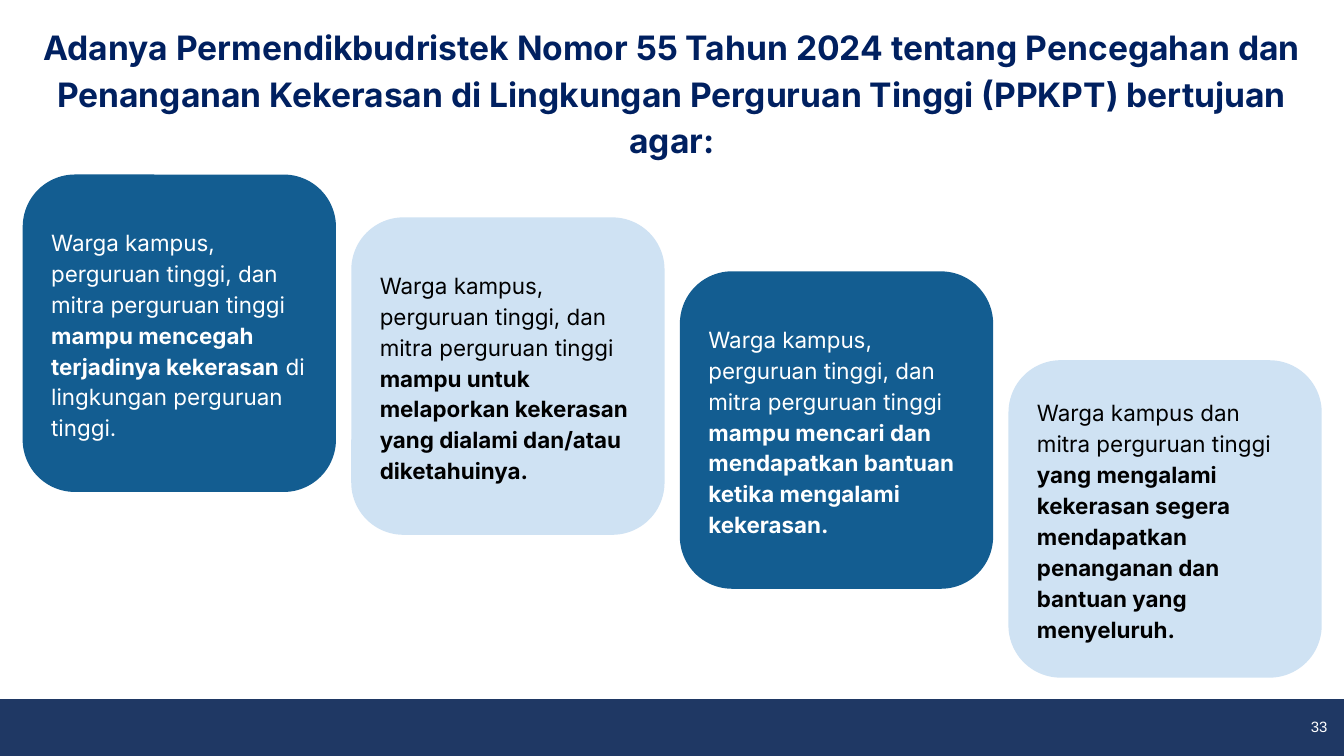
from dataclasses import dataclass

from pptx import Presentation
from pptx.dml.color import RGBColor as RGB
from pptx.enum.shapes import MSO_SHAPE as SHAPE
from pptx.enum.text import MSO_ANCHOR as ANCHOR, MSO_AUTO_SIZE as AUTO, PP_ALIGN as ALIGN
from pptx.util import Cm, Pt


@dataclass(frozen=True)
class Theme:
    navy: str = "1F3864"
    heading: str = "002060"
    blue: str = "135D91"
    pale: str = "CFE2F3"
    white: str = "FFFFFF"
    black: str = "000000"
    font: str = "Inter"
    number_font: str = "Arial"
    title_size: int = 18
    body_size: int = 12
    number_size: int = 8


class SlideBuilder:
    def __init__(self, slide, theme):
        self.s = slide
        self.theme = theme

    def frame(self, sp, anchor, inset=(0.25, 0.25)):
        tf = sp.text_frame
        across, down = map(Cm, inset)
        formats = {
            "word_wrap": True, "auto_size": AUTO.NONE, "vertical_anchor": anchor,
            "margin_left": across, "margin_right": across,
            "margin_top": down, "margin_bottom": down,
        }
        for name, value in formats.items():
            setattr(tf, name, value)
        return tf

    def add_runs(self, p, runs, size, color, align, spacing=1.15, font=None):
        for name, value in {"alignment": align, "line_spacing": spacing}.items():
            setattr(p, name, value)
        for text, bold in runs:
            r = p.add_run()
            r.text = text
            formats = {"name": font or self.theme.font, "size": Pt(size), "bold": bold}
            for name, value in formats.items():
                setattr(r.font, name, value)
            r.font.color.rgb = RGB.from_string(color)

    def shape(self, kind, box, fill):
        sp = self.s.shapes.add_shape(kind, *map(Cm, box))
        sp.shadow.inherit = False
        sp.fill.solid()
        sp.fill.fore_color.rgb = RGB.from_string(fill)
        sp.line.fill.background()
        return sp

    def title(self, box, text):
        sp = self.s.shapes.title
        for name, value in zip(("left", "top", "width", "height"), box):
            setattr(sp, name, Cm(value))
        tf = self.frame(sp, ANCHOR.TOP)
        self.add_runs(tf.paragraphs[0], [(text, True)], self.theme.title_size,
                      self.theme.heading, ALIGN.CENTER)

    def card(self, box, fill, color, paragraphs):
        sp = self.shape(SHAPE.ROUNDED_RECTANGLE, box, fill)
        tf = self.frame(sp, ANCHOR.MIDDLE)
        for i, runs in enumerate(paragraphs):
            p = tf.add_paragraph() if i else tf.paragraphs[0]
            self.add_runs(p, runs, self.theme.body_size, color, ALIGN.LEFT)

    def footer(self, box, number_box, number):
        sp = self.shape(SHAPE.RECTANGLE, box, self.theme.navy)
        sp.line.color.rgb = RGB.from_string(self.theme.navy)
        sp.line.width = Pt(1)
        sp = self.s.shapes.add_textbox(*map(Cm, number_box))
        tf = self.frame(sp, ANCHOR.MIDDLE, (0.18, 0.1))
        self.add_runs(tf.paragraphs[0], [(number, False)], self.theme.number_size,
                      self.theme.white, ALIGN.RIGHT, 1.0, self.theme.number_font)


def main():
    theme = Theme()
    prs = Presentation()
    prs.slide_width, prs.slide_height = Cm(25.4), Cm(14.29)
    builder = SlideBuilder(prs.slides.add_slide(prs.slide_layouts[5]), theme)

    builder.footer((0, 13.23, 25.4, 1.06), (23.62, 13.49, 1.65, 0.5), "33")
    builder.title((0, 0.15, 25.4, 3.05),
                  "Adanya Permendikbudristek Nomor 55 Tahun 2024 tentang Pencegahan dan "
                  "Penanganan Kekerasan di Lingkungan Perguruan Tinggi (PPKPT) bertujuan agar:")

    everyone = ("Warga kampus, perguruan tinggi, dan mitra perguruan tinggi ", False)
    cards = [
        (3.3, [[everyone, ("mampu mencegah terjadinya kekerasan", True), (" di", False)],
               [("lingkungan perguruan tinggi.", False)]]),
        (4.11, [[everyone, ("mampu untuk melaporkan kekerasan yang dialami "
                            "dan/atau diketahuinya.", True)]]),
        (5.13, [[everyone, ("mampu mencari dan mendapatkan bantuan ketika "
                            "mengalami kekerasan.", True)]]),
        (6.81, [[("Warga kampus dan mitra perguruan tinggi ", False),
                 ("yang mengalami kekerasan segera mendapatkan penanganan dan "
                  "bantuan yang menyeluruh.", True)]]),
    ]
    styles = [(theme.blue, theme.white), (theme.pale, theme.black)]
    left, pitch, width, height = 0.43, 6.21, 5.92, 6.0
    for i, (top, paragraphs) in enumerate(cards):
        builder.card((left + i * pitch, top, width, height), *styles[i % 2], paragraphs)

    prs.save("out.pptx")


if __name__ == "__main__":
    main()
